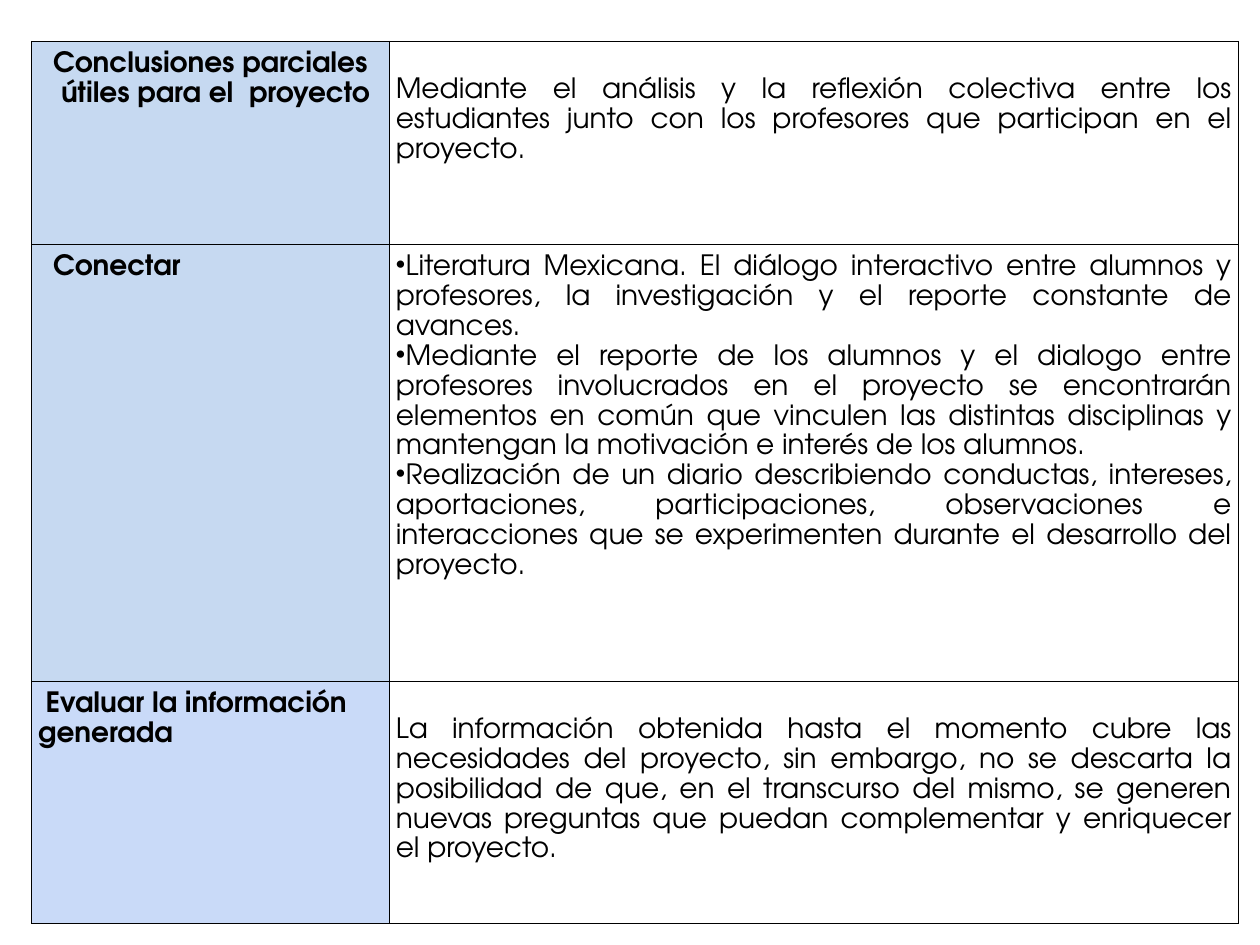
from dataclasses import dataclass

from lxml.etree import SubElement
from pptx import Presentation
from pptx.dml.color import RGBColor
from pptx.enum.text import PP_ALIGN as Align
from pptx.oxml.ns import qn
from pptx.table import _Cell as Cell
from pptx.util import Cm, Pt

FONT = "TeX Gyre Adventor"
BLACK = "000000"
MARGIN = 0.13
COLUMN_WIDTHS = (7.21, 17.12)


@dataclass(frozen=True)
class Line:
    """One paragraph; left and first are its indents in centimetres."""
    text: str
    left: float = 0
    first: float = 0


@dataclass(frozen=True)
class Stage:
    heading: tuple[Line, ...]
    details: tuple[Line, ...]
    height: float
    fill: str
    details_top: float = MARGIN
    bullet: str = ""


STAGES = (
    Stage(
        (Line("Conclusiones parciales", first=0.3),
         Line("útiles para el  proyecto", left=0.46)),
        (Line("Mediante el análisis y la reflexión colectiva entre los estudiantes "
              "junto con los profesores que participan en el proyecto."),),
        height=4.09, fill="C6D9F1", details_top=0.65,
    ),
    Stage(
        (Line("Conectar", first=0.3),),
        (Line("Literatura Mexicana. El diálogo interactivo entre alumnos y profesores, "
              "la investigación y el reporte constante de avances."),
         Line("Mediante el reporte de los alumnos y el dialogo entre profesores "
              "involucrados en el proyecto se encontrarán elementos en común que "
              "vinculen las distintas disciplinas y mantengan la motivación e interés "
              "de los alumnos."),
         Line("Realización de un diario describiendo conductas, intereses, "
              "aportaciones, participaciones, observaciones e interacciones que se "
              "experimenten durante el desarrollo del proyecto.")),
        height=8.81, fill="C6D9F1", bullet="•",
    ),
    Stage(
        (Line("Evaluar la información generada", first=0.15),),
        (Line("La información obtenida hasta el momento cubre las necesidades del "
              "proyecto, sin embargo, no se descarta la posibilidad de que, en el "
              "transcurso del mismo, se generen nuevas preguntas que puedan "
              "complementar y enriquecer el proyecto."),),
        height=4.88, fill="C9DAF8", details_top=0.65,
    ),
)


def color(value: str) -> RGBColor:
    return RGBColor.from_string(value)


def write(cell: Cell, lines: tuple[Line, ...], *, bold: bool = False,
          align: Align = Align.LEFT, bullet: str = "", top: float = MARGIN) -> None:
    cell.margin_left = cell.margin_right = cell.margin_bottom = Cm(MARGIN)
    cell.margin_top = Cm(top)
    frame = cell.text_frame
    for index, line in enumerate(lines):
        paragraph = frame.add_paragraph() if index else frame.paragraphs[0]
        paragraph.alignment = align
        paragraph.line_spacing = 1.15
        properties = paragraph._p.get_or_add_pPr()
        properties.set("marL", str(Cm(line.left)))
        properties.set("indent", str(Cm(line.first)))
        if bullet:
            SubElement(properties, qn("a:buChar"), char=bullet)
        run = paragraph.add_run()
        run.text = line.text
        run.font.name = FONT
        run.font.size = Pt(16)
        run.font.bold = bold
        run.font.color.rgb = color(BLACK)


def add_borders(cell: Cell) -> None:
    """Call before the fill is set: the schema puts borders first."""
    properties = cell._tc.get_or_add_tcPr()
    for side in ("lnL", "lnR", "lnT", "lnB"):
        border = SubElement(properties, qn(f"a:{side}"), w=str(Pt(1)))
        SubElement(SubElement(border, qn("a:solidFill")), qn("a:srgbClr"), val=BLACK)


def fill_cell(cell: Cell, fill: str | None) -> None:
    if fill:
        cell.fill.solid()
        cell.fill.fore_color.rgb = color(fill)
    else:
        cell.fill.background()


def main() -> None:
    deck = Presentation()
    deck.slide_width, deck.slide_height = Cm(25.4), Cm(19.05)
    slide = deck.slides.add_slide(deck.slide_layouts[6])
    table = slide.shapes.add_table(
        len(STAGES), len(COLUMN_WIDTHS), Cm(0.64), Cm(0.84),
        Cm(sum(COLUMN_WIDTHS)), Cm(sum(stage.height for stage in STAGES)),
    ).table
    table.first_row = table.horz_banding = False
    for column, width in zip(table.columns, COLUMN_WIDTHS):
        column.width = Cm(width)

    for row, stage in zip(table.rows, STAGES):
        row.height = Cm(stage.height)
        heading, details = row.cells
        write(heading, stage.heading, bold=True)
        write(details, stage.details, align=Align.JUSTIFY,
              bullet=stage.bullet, top=stage.details_top)
        for cell, fill in ((heading, stage.fill), (details, None)):
            add_borders(cell)
            fill_cell(cell, fill)

    deck.save("out.pptx")


if __name__ == "__main__":
    main()
